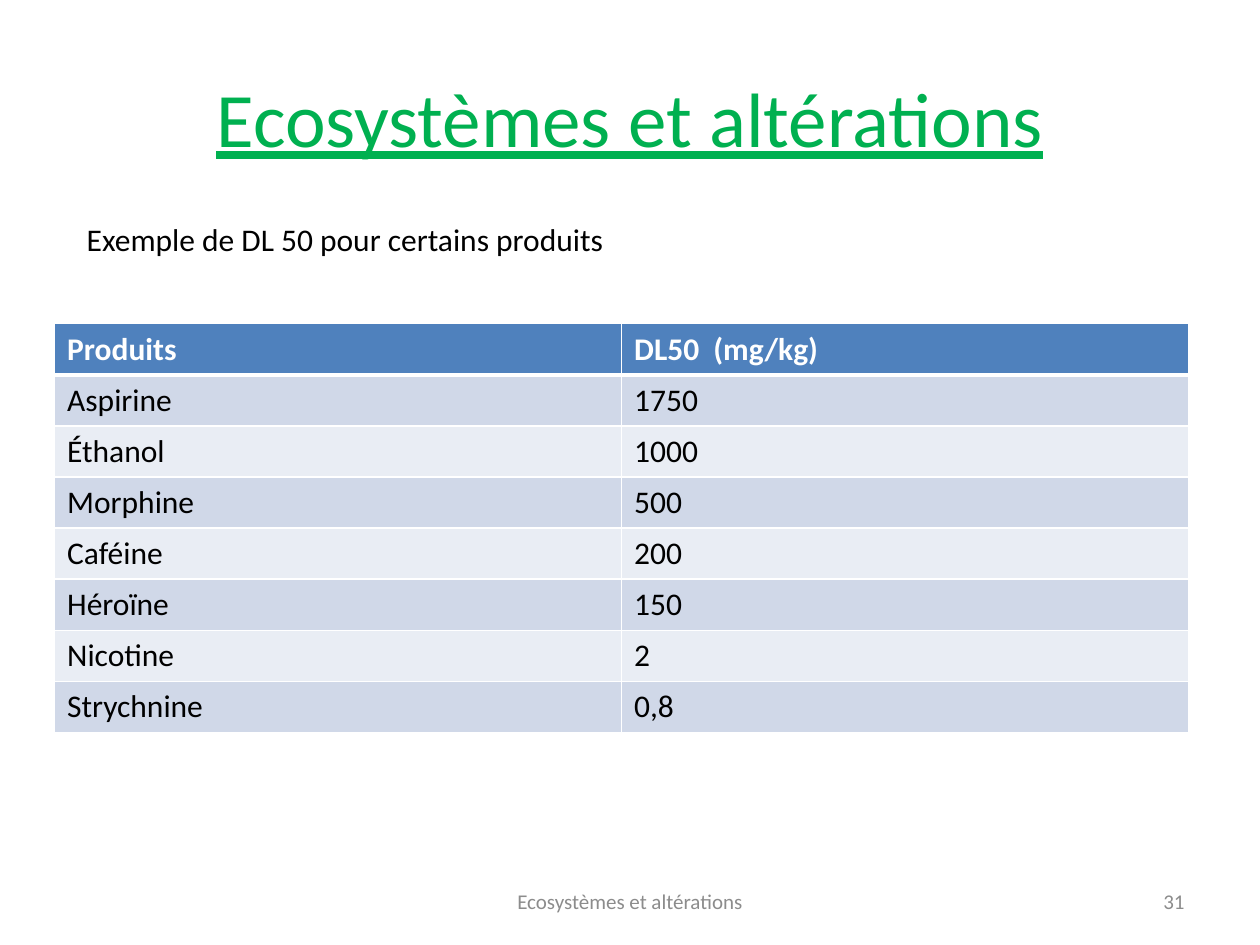
from dataclasses import dataclass

from lxml import etree
from pptx import Presentation
from pptx import util as u
from pptx.dml.color import RGBColor
from pptx.enum import text
from pptx.oxml import ns


@dataclass(frozen=True)
class Theme:
    font: str = "Calibri"
    title_color: str = "00B050"
    ink: str = "000000"
    paper: str = "FFFFFF"
    muted: str = "8C8C8C"
    header: str = "4F81BD"
    bands: tuple = ("D0D8E8", "E9EDF4")
    title_size: int = 44
    body_size: int = 18
    footer_size: int = 12


THEME = Theme()
TITLE = "Ecosystèmes et altérations"
DOSES = [
    ("Produits", "DL50  (mg/kg)"),
    ("Aspirine", "1750"),
    ("Éthanol", "1000"),
    ("Morphine", "500"),
    ("Caféine", "200"),
    ("Héroïne", "150"),
    ("Nicotine", "2"),
    ("Strychnine", "0,8"),
]


def write(frame, words, size=THEME.body_size, color=THEME.ink, bold=False,
          underline=False, align=text.PP_ALIGN.LEFT, anchor=text.MSO_ANCHOR.TOP):
    frame.word_wrap = True
    frame.vertical_anchor = anchor
    para = frame.paragraphs[0]
    para.alignment = align
    span = para.add_run()
    span.text = words
    span.font.name = THEME.font
    span.font.size = u.Pt(size)
    span.font.bold = bold
    span.font.underline = underline
    span.font.color.rgb = RGBColor.from_string(color)


def add_title(page, words):
    title = page.shapes.title
    title.left, title.top, title.width, title.height = map(u.Pt, (36, 21.6, 648, 90))
    write(title.text_frame, words, size=THEME.title_size, color=THEME.title_color,
          underline=True, align=text.PP_ALIGN.CENTER, anchor=text.MSO_ANCHOR.MIDDLE)


def add_label(page, words, left, top, width, height, **style):
    box = page.shapes.add_textbox(*map(u.Pt, (left, top, width, height)))
    write(box.text_frame, words, **style)


def set_borders(cell, **widths):
    """Draw the cell's edges; they must precede the fill in the cell properties."""
    properties = cell._tc.get_or_add_tcPr()
    for place, (edge, width) in enumerate(widths.items()):
        line = etree.Element(ns.qn(f"a:ln{edge}"), w=str(u.Pt(width)))
        fill = etree.SubElement(line, ns.qn("a:solidFill"))
        etree.SubElement(fill, ns.qn("a:srgbClr"), val=THEME.paper)
        properties.insert(place, line)


def add_dose_table(page, rows, left, top, width, row_height):
    frame = page.shapes.add_table(len(rows), len(rows[0]), u.Pt(left), u.Pt(top),
                                  u.Pt(width), u.Pt(row_height * len(rows)))
    table = frame.table
    for r, values in enumerate(rows):
        table.rows[r].height = u.Pt(row_height)
        is_header = r == 0
        fill = THEME.header if is_header else THEME.bands[(r - 1) % 2]
        for c, value in enumerate(values):
            cell = table.cell(r, c)
            cell.fill.solid()
            cell.fill.fore_color.rgb = RGBColor.from_string(fill)
            set_borders(cell, L=1, R=1, T=3 if r == 1 else 1, B=3 if is_header else 1)
            write(cell.text_frame, value, bold=is_header,
                  color=THEME.paper if is_header else THEME.ink)


def main():
    deck = Presentation()
    deck.slide_width, deck.slide_height = u.Pt(720), u.Pt(540)
    page = deck.slides.add_slide(deck.slide_layouts.get_by_name("Title Only"))
    add_title(page, TITLE)
    add_dose_table(page, DOSES, left=31.2, top=185, width=648, row_height=29.2)
    footer = dict(top=500.5, height=28.8, size=THEME.footer_size, color=THEME.muted,
                  anchor=text.MSO_ANCHOR.MIDDLE)
    add_label(page, TITLE, left=246, width=228, align=text.PP_ALIGN.CENTER, **footer)
    add_label(page, "31", left=516, width=168, align=text.PP_ALIGN.RIGHT, **footer)
    add_label(page, "Exemple de DL 50 pour certains produits",
              left=42.5, top=122.4, width=618, height=29)
    deck.save("out.pptx")


if __name__ == "__main__":
    main()
